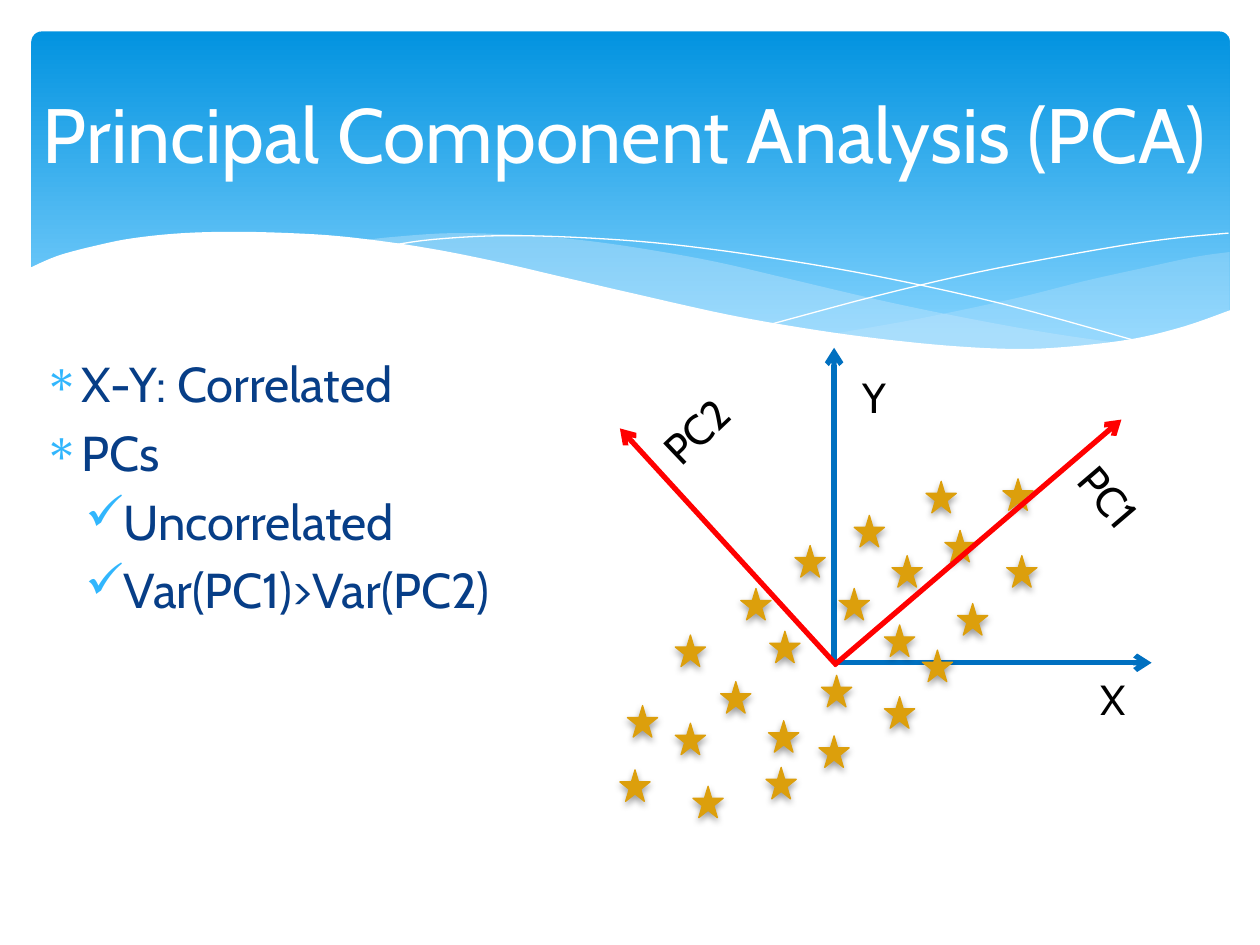
from dataclasses import dataclass

from lxml.etree import SubElement
from pptx import Presentation
from pptx.dml.color import RGBColor
from pptx.enum.shapes import MSO_CONNECTOR as Connector, MSO_SHAPE as Shape
from pptx.enum.text import MSO_ANCHOR as Anchor, PP_ALIGN as Align
from pptx.oxml.ns import qn
from pptx.util import Inches, Pt


@dataclass(frozen=True)
class Theme:
    """Colours, font and type sizes of the slide."""
    font: str = "Cabin"
    white: str = "FFFFFF"
    black: str = "000000"
    sky_top: str = "0293E0"
    sky_bottom: str = "83D3FE"
    mist: str = "C6E7FC"
    body: str = "073E87"
    bullet: str = "31B6FD"
    axis: str = "0070C0"
    component: str = "FF0000"
    star: str = "DC9F0C"
    title_size: int = 44
    body_size: int = 28
    label_size: int = 24


THEME = Theme()
rgb = RGBColor.from_string

RIGHT_MIST = (
    [(9.76, 2), (9.48, 2.04), (9.06, 2.13), (8.61, 2.23), (8.05, 2.37), (7.29, 2.53), (6.61, 2.65)],
    [(6.61, 2.65), (7.05, 2.71), (7.45, 2.75), (8.03, 2.78), (8.54, 2.76), (8.97, 2.7),
     (9.35, 2.62), (9.76, 2.47)])
LONG_MIST = (
    [(8.93, 2.73), (8.37, 2.65), (7.75, 2.54), (7.06, 2.4), (6.29, 2.22), (5.69, 2.08),
     (5.14, 1.98), (4.65, 1.91), (4.2, 1.87), (3.61, 1.85), (3.13, 1.88), (2.86, 1.91)],
    [(2.86, 1.91), (3.42, 1.99), (4.04, 2.11), (4.49, 2.22), (5.3, 2.4), (6.01, 2.55),
     (6.65, 2.66), (7.22, 2.74), (7.73, 2.77), (8.18, 2.78), (8.57, 2.77), (8.93, 2.73)])
FALLING_LINE = [(3.09, 1.95), (3.44, 1.9), (4.01, 1.87), (4.69, 1.89), (5.33, 1.94), (6.08, 2.04),
                (6.95, 2.19), (7.95, 2.41), (9.07, 2.72)]
RISING_LINE = [(6.13, 2.57), (6.95, 2.35), (7.76, 2.16), (8.66, 1.99), (9.24, 1.9), (9.75, 1.85)]
WHITE_WAVE = (
    [(9.77, 2.46), (9.4, 2.59), (8.99, 2.69), (8.5, 2.75), (8.09, 2.77), (7.61, 2.75), (7.08, 2.7),
     (6.48, 2.62), (5.79, 2.5), (5.03, 2.33), (4.47, 2.2), (3.91, 2.07), (3.4, 1.97), (2.92, 1.9),
     (2.5, 1.86), (1.93, 1.84), (1.46, 1.85), (1.06, 1.89), (0.76, 1.95), (0.46, 2.03),
     (0.23, 2.13)],
    [(0.23, 3.29), (9.77, 3.29)])
STARS = [(0.46, 2.34), (0.82, 2.71), (0.98, 1.97), (2.18, 1.71), (2.12, 2.83), (1.62, 2.66),
         (0.02, 3.41), (3.06, 1.1), (2.42, 2.46), (2.7, 2.09), (3.09, 1.71), (1.21, 2.31),
         (1.88, 1.39), (1.6, 3.14), (0.08, 2.9), (1.41, 1.63), (1.76, 1.97), (0.6, 3.54),
         (2.12, 2.26), (2.6, 1.51), (2.45, 1.12), (0.46, 3.04), (1.18, 3.39), (1.2, 3.02)]
AXES = [((1.74, 2.56), (4.24, 2.56)), ((1.72, 2.56), (1.72, 0.06))]
COMPONENTS = [((1.72, 2.58), (4, 0.63)), ((1.74, 2.58), (0.02, 0.7))]
LABELS = [("X", 3.42, 2.6, 0, Align.CENTER), ("Y", 1.85, 0.2, 0, Align.LEFT),
          ("PC1", 3.49, 1.11, 49.5, Align.LEFT), ("PC2", 0.2, 0.38, 316.3, Align.LEFT)]
POINTS = [("X-Y: Correlated", 0), ("PCs", 0), ("Uncorrelated", 1), ("Var(PC1)>Var(PC2)", 1)]


def smooth(knots, steps=5):
    """Return points on a Catmull-Rom curve through the knots."""
    padded = [knots[0], *knots, knots[-1]]
    curve = []
    for a, b, c, d in zip(padded, padded[1:], padded[2:], padded[3:]):
        for step in range(steps):
            t = step / steps
            curve.append(tuple(
                q + t * (r - p) / 2 + t * t * (2 * p - 5 * q + 4 * r - s) / 2
                + t ** 3 * (3 * q - p - 3 * r + s) / 2
                for p, q, r, s in zip(a, b, c, d)))
    return curve + [knots[-1]]


def draw_outline(slide, box, points, closed):
    """Build a freeform through points measured from the box corner."""
    left, top = box[:2]
    spots = [(Inches(left + x), Inches(top + y)) for x, y in points]
    builder = slide.shapes.build_freeform(*spots[0], scale=1.0)
    builder.add_line_segments(spots[1:], close=closed)
    outline = builder.convert_to_shape()
    outline.shadow.inherit = False
    return outline


def add_area(slide, box, edges, color, alpha=100):
    """Fill the area between curved edges, with an opacity in percent."""
    area = draw_outline(slide, box, [point for edge in edges for point in smooth(edge)], True)
    area.fill.solid()
    area.fill.fore_color.rgb = rgb(color)
    area.line.fill.background()
    tint = area.fill._xPr.find(qn("a:solidFill"))[0]
    SubElement(tint, qn("a:alpha"), val=str(alpha * 1000))


def add_text(slide, box, text, size, color, align=Align.LEFT):
    """Add a one-paragraph text box."""
    label = slide.shapes.add_textbox(*map(Inches, box))
    label.text_frame.word_wrap = True
    paragraph = label.text_frame.paragraphs[0]
    paragraph.text = text
    paragraph.alignment = align
    style(paragraph, size, color)
    return label


def style(paragraph, size, color):
    """Set the font of a paragraph."""
    font = paragraph.font
    font.name, font.size, font.color.rgb = THEME.font, Pt(size), rgb(color)


def add_banner(slide, box):
    """Draw the gradient banner with its waves and title."""
    left, top, width, _ = box
    panel = slide.shapes.add_shape(Shape.ROUNDED_RECTANGLE, Inches(left + 0.25), Inches(top + 0.25),
                                   Inches(width - 0.49), Inches(2.7))
    panel.adjustments[0] = 0.03
    panel.shadow.inherit = False
    panel.line.fill.background()
    panel.fill.gradient()
    panel.fill.gradient_angle = 270
    stops = [(0, THEME.sky_top), (0.9, THEME.sky_bottom)]
    for stop, (position, color) in zip(panel.fill.gradient_stops, stops):
        stop.position, stop.color.rgb = position, rgb(color)
    add_area(slide, box, RIGHT_MIST, THEME.mist, 29)
    add_area(slide, box, LONG_MIST, THEME.mist, 40)
    for knots in (FALLING_LINE, RISING_LINE):
        thread = draw_outline(slide, box, smooth(knots), False)
        thread.fill.background()
        thread.line.color.rgb = rgb(THEME.white)
        thread.line.width = Pt(0)
    add_area(slide, box, WHITE_WAVE, THEME.white)
    title = add_text(slide, (left + 0.14, top + 0.37, width - 0.36, 1.37),
                     "Principal Component Analysis (PCA)", THEME.title_size, THEME.white,
                     Align.CENTER)
    title.text_frame.vertical_anchor = Anchor.MIDDLE


def add_points(slide, box):
    """Write the two-level bullet list."""
    frame = slide.shapes.add_textbox(*map(Inches, box)).text_frame
    frame.word_wrap = True
    for index, (text, level) in enumerate(POINTS):
        point = frame.add_paragraph() if index else frame.paragraphs[0]
        point.text, point.level = text, level
        point.space_before = Pt(THEME.body_size * 0.2)
        style(point, THEME.body_size, THEME.body)
        props = point._p.get_or_add_pPr()
        props.set("marL", str(Inches((0.3, 0.63)[level])))
        props.set("indent", str(Inches(-0.3)))
        bullet_color = props.makeelement(qn("a:buClr"))
        SubElement(bullet_color, qn("a:srgbClr"), val=THEME.bullet)
        bullet = props.makeelement(qn("a:buChar"), char="∗✓"[level])
        font_props = props.find(qn("a:defRPr"))
        font_props.addprevious(bullet_color)
        font_props.addprevious(bullet)


def add_arrow(slide, box, ends, color):
    """Draw an arrow between two points measured from the box corner."""
    spots = [Inches(edge + value) for end in ends for edge, value in zip(box, end)]
    arrow = slide.shapes.add_connector(Connector.STRAIGHT, *spots)
    arrow.line.color.rgb = rgb(color)
    arrow.line.width = Pt(3)
    SubElement(arrow.line._get_or_add_ln(), qn("a:tailEnd"), type="arrow")
    SubElement(arrow._element.spPr, qn("a:effectLst"))


def add_star(slide, left, top):
    """Draw one data star with a soft shadow below it."""
    star = slide.shapes.add_shape(Shape.STAR_5_POINT, Inches(left), Inches(top),
                                  Inches(0.24), Inches(0.25))
    star.fill.solid()
    star.fill.fore_color.rgb = star.line.color.rgb = rgb(THEME.star)
    star.line.width = Pt(0.75)
    star.shadow.inherit = False
    effects = star._element.spPr.find(qn("a:effectLst"))
    shadow = SubElement(effects, qn("a:outerShdw"), blurRad=str(Pt(4)), dist=str(Pt(2)),
                        dir="5400000", rotWithShape="0")
    shade = SubElement(shadow, qn("a:srgbClr"), val=THEME.black)
    SubElement(shade, qn("a:alpha"), val="38000")


def add_scatter(slide, box):
    """Draw the axes, data stars, component arrows and their labels."""
    left, top = box[:2]
    for ends in AXES:
        add_arrow(slide, box, ends, THEME.axis)
    for x, y in STARS:
        add_star(slide, left + x, top + y)
    for ends in COMPONENTS:
        add_arrow(slide, box, ends, THEME.component)
    for text, x, y, angle, align in LABELS:
        label = add_text(slide, (left + x, top + y, 1.03, 0.5), text, THEME.label_size,
                         THEME.black, align)
        label.rotation = angle


def main():
    """Build and save the slide."""
    deck = Presentation()
    deck.slide_width, deck.slide_height = Inches(10), Inches(7.5)
    slide = deck.slides.add_slide(deck.slide_layouts[6])
    add_banner(slide, (0, 0, 10, 3.29))
    add_points(slide, (0.25, 2.76, 4.26, 3.67))
    add_scatter(slide, (4.9, 2.7, 4.45, 3.8))
    deck.save("out.pptx")


if __name__ == "__main__":
    main()
